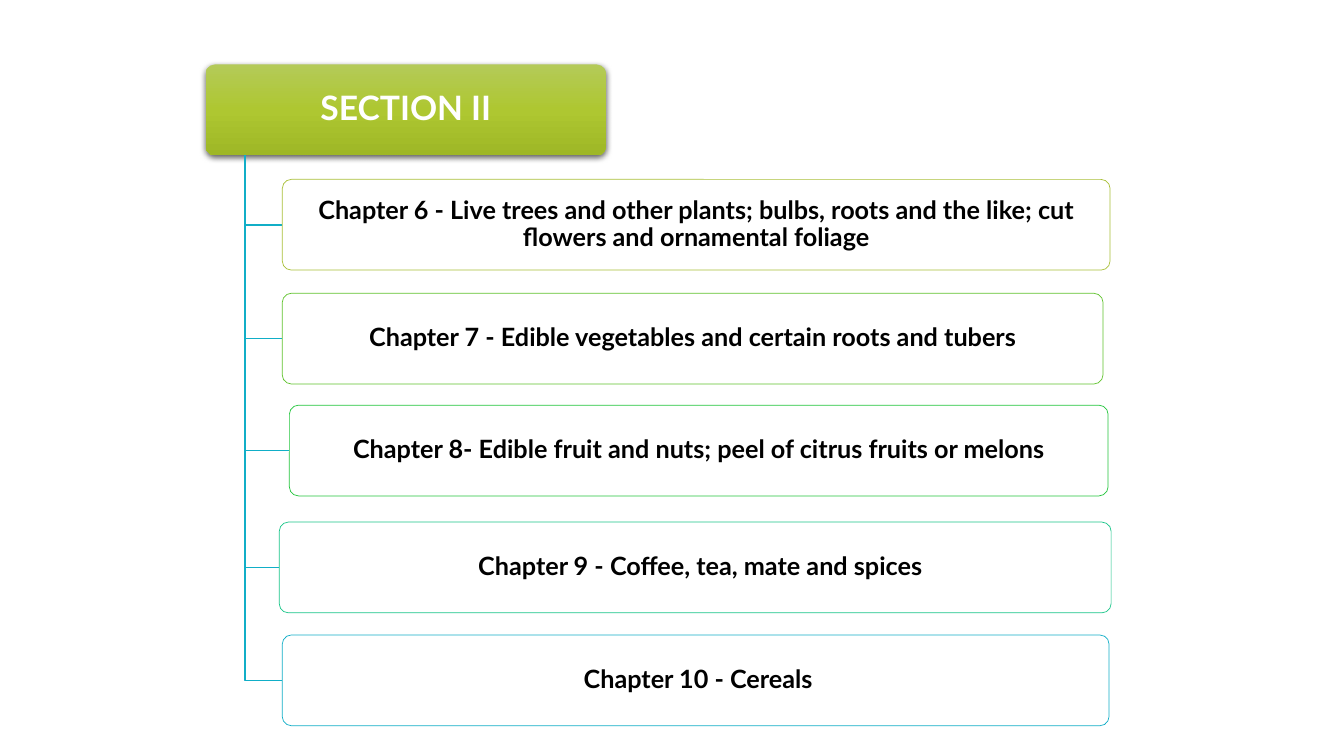
"""Build the Section II chapter tree slide."""
from lxml import etree
from pptx import Presentation
from pptx.dml.color import RGBColor
from pptx.enum.shapes import MSO_SHAPE as SHAPE
from pptx.enum.text import MSO_ANCHOR as ANCHOR, PP_ALIGN as ALIGN
from pptx.oxml import parse_xml
from pptx.oxml.ns import nsdecls, qn
from pptx.util import Inches, Pt

FONT = "Lato"
TRUNK_X, TRUNK_TOP = 2.43, 1.54
BOX_H = 0.9
TEAL = "11AEC7"
HEADER_STOPS = [(0, "B4CA58"), (50, "AEC731"), (100, "9EB726")]
CHAPTERS = [
    ("Chapter 6 - Live trees and other plants; bulbs, roots and the like; "
     "cut flowers and ornamental foliage", 2.8, 1.78, 8.21, "A9C038", 0),
    ("Chapter 7 - Edible vegetables and certain roots and tubers",
     2.8, 2.91, 8.14, "60C32D", 0),
    ("Chapter 8- Edible fruit and nuts; peel of citrus fruits or melons",
     2.87, 4.02, 8.12, "23C53C", 0),
    ("Chapter 9 - Coffee, tea, mate and spices",
     2.77, 5.18, 8.25, "1AC689", 0.1),
    ("Chapter 10 - Cereals", 2.8, 6.3, 8.2, TEAL, 0.05),
]


def rgb(value):
    """Turn a hex string into a colour."""
    return RGBColor.from_string(value)


def add_box(slide, text, x, y, w, size, color, indent=0):
    """Add a rounded box with centred bold text."""
    s = slide.shapes.add_shape(SHAPE.ROUNDED_RECTANGLE, Inches(x), Inches(y),
                               Inches(w), Inches(BOX_H))
    s.adjustments[0] = 0.1
    s.shadow.inherit = False
    tf = s.text_frame
    tf.word_wrap = True
    tf.vertical_anchor = ANCHOR.MIDDLE
    tf.margin_left = Inches(0.07 + indent)
    tf.margin_right = Inches(0.07)
    tf.margin_top = tf.margin_bottom = Inches(0.05)
    p = tf.paragraphs[0]
    p.text = text
    p.alignment = ALIGN.CENTER
    p.line_spacing = 0.9
    p.font.name = FONT
    p.font.size = Pt(size)
    p.font.bold = True
    p.font.color.rgb = rgb(color)
    return s


def add_header(slide, text, x, y, w):
    """Add the section box with its gradient and soft shadow."""
    s = add_box(slide, text, x, y, w, 24, "FFFFFF")
    s.line.fill.background()
    stops = "".join(f'<a:gs pos="{pos * 1000}"><a:srgbClr val="{color}"/></a:gs>'
                    for pos, color in HEADER_STOPS)
    gradient = parse_xml(f'<a:gradFill {nsdecls("a")} rotWithShape="1">'
                         f'<a:gsLst>{stops}</a:gsLst>'
                         '<a:lin ang="5400000" scaled="0"/></a:gradFill>')
    props = s.fill._xPr
    props.find(qn("a:prstGeom")).addnext(gradient)
    shadow = parse_xml(
        f'<a:outerShdw {nsdecls("a")} blurRad="{Pt(4.5)}" dist="{Pt(1.5)}" '
        'dir="5400000" algn="ctr" rotWithShape="0"><a:srgbClr val="000000">'
        '<a:alpha val="63000"/></a:srgbClr></a:outerShdw>')
    props.find(qn("a:effectLst")).append(shadow)


def add_chapter(slide, text, x, y, w, color, indent):
    """Add an outlined chapter box with a translucent white fill."""
    s = add_box(slide, text, x, y, w, 18, "000000", indent)
    s.fill.solid()
    s.fill.fore_color.rgb = rgb("FFFFFF")
    white = s.fill._xPr.find(qn("a:solidFill"))[0]
    etree.SubElement(white, qn("a:alpha")).set("val", "90000")
    s.line.color.rgb = rgb(color)
    s.line.width = Pt(0.5)


def add_branch(slide, x, y):
    """Add an elbow from the section box to a chapter box."""
    builder = slide.shapes.build_freeform(Inches(TRUNK_X), Inches(TRUNK_TOP))
    builder.add_line_segments([(Inches(TRUNK_X), Inches(y)),
                               (Inches(x), Inches(y))], close=False)
    s = builder.convert_to_shape()
    s.shadow.inherit = False
    s.fill.background()
    s.line.color.rgb = rgb(TEAL)
    s.line.width = Pt(1)


def main():
    """Build and save the slide."""
    prs = Presentation()
    prs.slide_width, prs.slide_height = Inches(13.33), Inches(7.5)
    slide = prs.slides.add_slide(prs.slide_layouts[6])
    add_header(slide, "SECTION II", 2.04, 0.64, 3.97)
    for text, x, y, w, color, indent in CHAPTERS:
        add_branch(slide, x, y + BOX_H / 2)
        add_chapter(slide, text, x, y, w, color, indent)
    prs.save("out.pptx")


if __name__ == "__main__":
    main()
